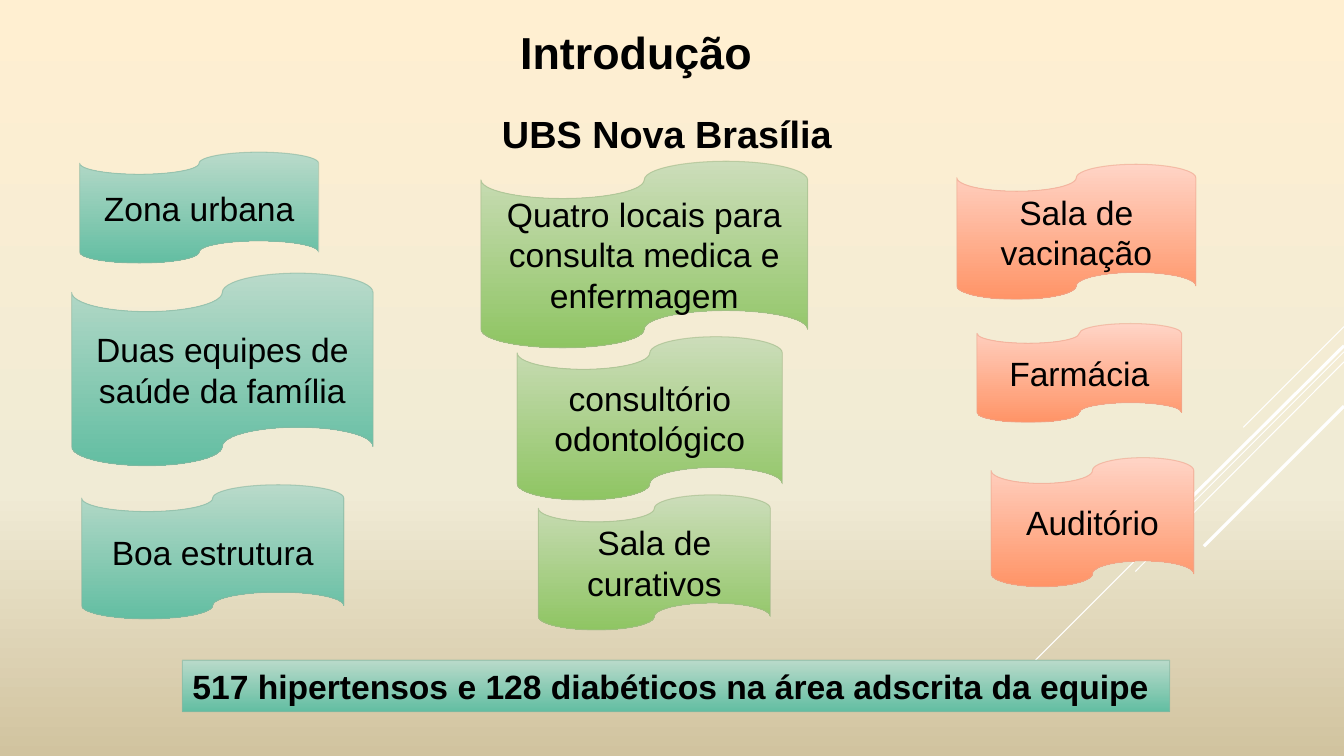
from copy import deepcopy
from dataclasses import dataclass

from lxml.etree import SubElement
from pptx import Presentation
from pptx.dml.color import RGBColor
from pptx.enum.shapes import MSO_CONNECTOR, MSO_SHAPE
from pptx.enum.text import MSO_ANCHOR, PP_ALIGN
from pptx.oxml.ns import qn
from pptx.util import Inches, Pt


@dataclass(frozen=True)
class Palette:
    top: str
    bottom: str
    border: str


@dataclass(frozen=True)
class Theme:
    font: str = "Arial"
    text: str = "000000"
    ray: str = "FFFFFF"
    background: tuple = ((0, "FFEFD1"), (0.65, "F0EBD5"), (1, "D1C39F"))
    teal: Palette = Palette("B9DACA", "63BEA2", "8AB7A1")
    green: Palette = Palette("CCDDBA", "8FC563", "A4BB8B")
    coral: Palette = Palette("FFD4C6", "FF9467", "EEA78F")
    border_width: float = 0.75
    border_opacity: int = 60
    title_size: int = 32
    subtitle_size: int = 27
    body_size: int = 24


THEME = Theme()

# Decorative rays: start x, start y, end x, end y, width in points
RAYS = [
    (13.33, 3.24, 12.33, 4.24, 0.75),
    (13.33, 3.49, 10.07, 6.75, 0.75),
    (13.33, 3.59, 11.26, 5.67, 0.75),
    (13.33, 3.43, 11.42, 5.33, 2.25),
    (13.33, 4.03, 11.94, 5.42, 2.25),
]

# Each column: palette and tapes as text, left, top, width, height
TAPE_COLUMNS = [
    (THEME.teal, [
        ("Zona urbana", 0.79, 1.51, 2.37, 1.1),
        ("Duas equipes de saúde da família", 0.71, 2.71, 2.99, 1.91),
        ("Boa estrutura", 0.81, 4.81, 2.6, 1.33),
    ]),
    (THEME.green, [
        ("Quatro locais para consulta medica e enfermagem", 4.77, 1.6, 3.24, 1.85),
        ("consultório odontológico", 5.13, 3.34, 2.63, 1.62),
        ("Sala de curativos", 5.34, 4.91, 2.3, 1.34),
    ]),
    (THEME.coral, [
        ("Sala de vacinação", 9.49, 1.63, 2.37, 1.34),
        ("Farmácia", 9.69, 3.21, 2.03, 0.98),
        ("Auditório", 9.83, 4.54, 2.01, 1.28),
    ]),
]


def set_gradient(fill, stops):
    """Fill from top to bottom with (position, colour) stops."""
    fill.gradient()
    fill.gradient_angle = 270
    first_stop = fill.gradient_stops[0]._gs
    for _ in range(len(stops) - len(fill.gradient_stops)):
        first_stop.addnext(deepcopy(first_stop))
    for gradient_stop, (position, colour) in zip(fill.gradient_stops, stops):
        gradient_stop.position = position
        gradient_stop.color.rgb = RGBColor.from_string(colour)


def set_text(shape, text, size, bold=False, align=PP_ALIGN.CENTER,
             anchor=MSO_ANCHOR.MIDDLE):
    text_frame = shape.text_frame
    text_frame.text = text
    text_frame.word_wrap = True
    text_frame.vertical_anchor = anchor
    paragraph = text_frame.paragraphs[0]
    paragraph.alignment = align
    for run in paragraph.runs:
        run.font.name = THEME.font
        run.font.size = Pt(size)
        run.font.bold = bold
        run.font.color.rgb = RGBColor.from_string(THEME.text)


def add_ray(slide, start_x, start_y, end_x, end_y, width):
    ray = slide.shapes.add_connector(
        MSO_CONNECTOR.STRAIGHT, Inches(start_x), Inches(start_y),
        Inches(end_x), Inches(end_y))
    ray.line.color.rgb = RGBColor.from_string(THEME.ray)
    ray.line.width = Pt(width)
    SubElement(ray._element.spPr, qn("a:effectLst"))


def add_heading(slide, text, left, top, width, height, size):
    heading = slide.shapes.add_textbox(
        Inches(left), Inches(top), Inches(width), Inches(height))
    set_text(heading, text, size, bold=True, anchor=MSO_ANCHOR.TOP)


def add_panel(slide, kind, palette, left, top, width, height):
    """Add a gradient shape with a translucent border."""
    panel = slide.shapes.add_shape(
        kind, Inches(left), Inches(top), Inches(width), Inches(height))
    panel.shadow.inherit = False
    set_gradient(panel.fill, [(0, palette.top), (1, palette.bottom)])
    panel.line.color.rgb = RGBColor.from_string(palette.border)
    panel.line.width = Pt(THEME.border_width)
    border_colour = panel.line.fill._xPr.find(".//" + qn("a:srgbClr"))
    SubElement(border_colour, qn("a:alpha"), val=str(THEME.border_opacity * 1000))
    return panel


def main():
    presentation = Presentation()
    presentation.slide_width = Inches(13.33)
    presentation.slide_height = Inches(7.5)
    slide = presentation.slides.add_slide(presentation.slide_layouts[6])

    # Background and rays
    set_gradient(slide.background.fill, THEME.background)
    for ray in RAYS:
        add_ray(slide, *ray)

    # Headings
    add_heading(slide, "Introdução", 4.71, 0.2, 3.2, 0.64, THEME.title_size)
    add_heading(slide, "UBS Nova Brasília", 0.68, 1.05, 11.87, 0.55,
                THEME.subtitle_size)

    # Tapes
    for palette, tapes in TAPE_COLUMNS:
        for text, *box in tapes:
            tape = add_panel(slide, MSO_SHAPE.FLOWCHART_PUNCHED_TAPE, palette, *box)
            set_text(tape, text, THEME.body_size)

    # Summary bar
    summary = add_panel(slide, MSO_SHAPE.RECTANGLE, THEME.teal,
                        1.81, 6.55, 9.79, 0.51)
    set_text(summary, "517 hipertensos e 128 diabéticos na área adscrita da equipe",
             THEME.body_size, bold=True, align=PP_ALIGN.LEFT)

    presentation.save("out.pptx")


if __name__ == "__main__":
    main()
